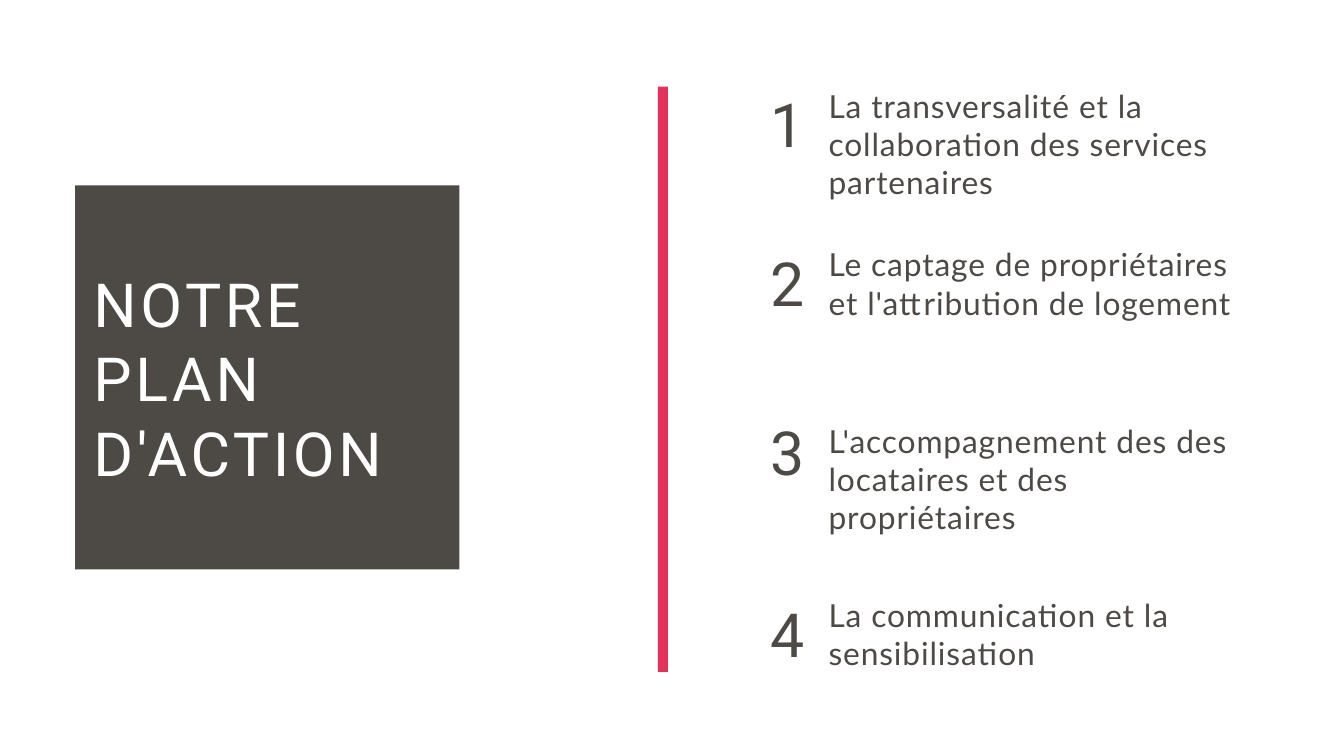
from dataclasses import dataclass

from pptx import Presentation
from pptx.dml.color import RGBColor
from pptx.enum.shapes import MSO_SHAPE
from pptx.enum.text import MSO_ANCHOR, MSO_AUTO_SIZE, PP_ALIGN
from pptx.util import Inches, Pt

RECT = MSO_SHAPE.RECTANGLE
TOP = MSO_ANCHOR.TOP
FIXED = MSO_AUTO_SIZE.NONE
LEFT, RIGHT = PP_ALIGN.LEFT, PP_ALIGN.RIGHT
TITLE_ONLY = 5
COLS, ROWS = 80, 45


@dataclass(frozen=True)
class Type:
    font: str
    size: float
    line: float
    track: float


@dataclass(frozen=True)
class Theme:
    dark: RGBColor = RGBColor.from_string("4D4A46")
    pink: RGBColor = RGBColor.from_string("E3315B")
    white: RGBColor = RGBColor.from_string("FFFFFF")
    head: Type = Type("Roboto", 65.1, 80, 3.9)
    body: Type = Type("Lato", 34, 40.8, 1)


class Deck:
    """Draw styled elements on a slide grid of 80 columns by 45 rows."""

    def __init__(self, theme):
        self.theme = theme
        self.file = Presentation()
        self.file.slide_width = Inches(20)
        self.file.slide_height = Inches(11.25)
        self.slide = self.file.slides.add_slide(self.file.slide_layouts[TITLE_ONLY])

    def place(self, col, row, wide, high):
        x = self.file.slide_width / COLS
        y = self.file.slide_height / ROWS
        return [round(n) for n in (col * x, row * y, wide * x, high * y)]

    def block(self, area, color):
        shape = self.slide.shapes.add_shape(RECT, *self.place(*area))
        shape.shadow.inherit = False
        shape.fill.solid()
        shape.fill.fore_color.rgb = color
        shape.line.fill.background()

    def typeset(self, shape, lines, style, color, align):
        frame = shape.text_frame
        frame.word_wrap = True
        frame.auto_size = FIXED
        frame.vertical_anchor = TOP
        frame.margin_left = frame.margin_right = 0
        frame.margin_top = frame.margin_bottom = 0
        for i, line in enumerate(lines):
            para = frame.add_paragraph() if i else frame.paragraphs[0]
            para.alignment = align
            para.line_spacing = Pt(style.line)
            run = para.add_run()
            run.text = line
            run.font.name = style.font
            run.font.size = Pt(style.size)
            run.font.color.rgb = color
            run._r.get_or_add_rPr().set("spc", str(round(style.track * 100)))

    def title(self, area, lines):
        shapes = self.slide.shapes
        shape = shapes.title
        shape.left, shape.top, shape.width, shape.height = self.place(*area)
        self.typeset(shape, lines, self.theme.head, self.theme.white, LEFT)
        shapes.element.append(shape.element)

    def text(self, area, lines, style, align=LEFT):
        box = self.slide.shapes.add_textbox(*self.place(*area))
        self.typeset(box, lines, style, self.theme.dark, align)

    def save(self):
        self.file.save("out.pptx")


STEPS = [
    (5.08, 5.16, ["La transversalité et la", "collaboration des services partenaires"]),
    (14.52, 14.6, ["Le captage de propriétaires et l'attribution de logement"]),
    (24.6, 25.12, ["L'accompagnement des des locataires et des propriétaires"]),
    (35.4, 35.48, ["La communication et la sensibilisation"]),
]


def main():
    theme = Theme()
    deck = Deck(theme)
    deck.block((4.48, 11.03, 22.87, 22.87), theme.dark)
    deck.title((5.56, 15.76, 20.72, 13.32), ["NOTRE", "PLAN", "D'ACTION"])
    deck.block((39.16, 5.16, 0.6, 34.84), theme.pink)
    for i, (top, row, lines) in enumerate(STEPS, 1):
        deck.text((41.68, top, 6.2, 4.44), [str(i)], theme.head, RIGHT)
        deck.text((49.32, row, 24.48, 6.8), lines, theme.body)
    deck.save()


if __name__ == "__main__":
    main()
